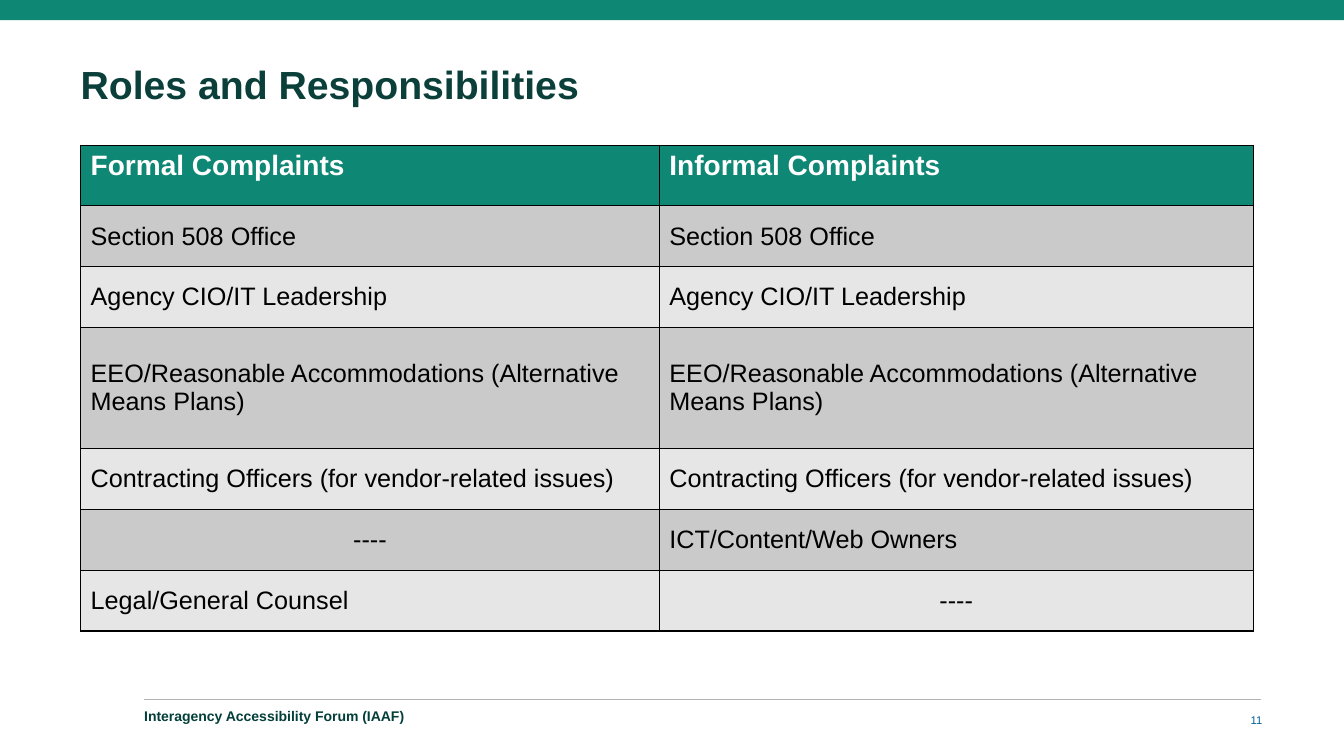
from dataclasses import dataclass

from lxml.etree import SubElement
from pptx import Presentation
from pptx.dml.color import RGBColor
from pptx.enum.shapes import MSO_CONNECTOR, MSO_SHAPE
from pptx.enum.text import MSO_ANCHOR, PP_ALIGN
from pptx.oxml.ns import qn
from pptx.util import Inches, Pt


@dataclass(frozen=True)
class Theme:
    font: str = "Arial"
    green: str = "0E8775"
    title: str = "0B3F3A"
    footer: str = "033F3A"
    number: str = "006197"
    rule: str = "B2B2B2"
    black: str = "000000"
    white: str = "FFFFFF"
    bands: tuple = ("CACACA", "E6E6E6")
    title_size: int = 28
    header_size: int = 20
    body_size: int = 18
    footer_size: int = 10
    number_size: int = 8


THEME = Theme()
WIDTH, HEIGHT = Inches(13.33), Inches(7.5)
LEFT = 6
ABSENT = "----"
COLUMN_SHARES = (43.06, 44.18)
ROW_UNITS = (1, 1, 1, 2, 1, 1, 1)
ROLES = (
    ("Formal Complaints", "Informal Complaints"),
    ("Section 508 Office",) * 2,
    ("Agency CIO/IT Leadership",) * 2,
    ("EEO/Reasonable Accommodations (Alternative Means Plans)",) * 2,
    ("Contracting Officers (for vendor-related issues)",) * 2,
    (ABSENT, "ICT/Content/Web Owners"),
    ("Legal/General Counsel", ABSENT),
)


def across(share):
    return round(WIDTH * share / 100)


def down(share):
    return round(HEIGHT * share / 100)


def area(left, top, width, height):
    return across(left), down(top), across(width), down(height)


def color(value):
    return RGBColor.from_string(value)


def write(frame, text, *, size, ink, bold=False, align=PP_ALIGN.LEFT, spacing=None):
    paragraph = frame.paragraphs[0]
    paragraph.alignment = align
    if spacing:
        paragraph.line_spacing = spacing
    run = paragraph.add_run()
    run.text = text
    run.font.name = THEME.font
    run.font.size = Pt(size)
    run.font.bold = bold
    run.font.color.rgb = color(ink)


def set_margins(frame, top=0):
    frame.word_wrap = True
    frame.margin_left = frame.margin_right = frame.margin_bottom = 0
    frame.margin_top = Inches(top)


def add_title(slide, text):
    title = slide.shapes.title
    title.left, title.top, title.width, title.height = area(LEFT, 8, 88, 6.27)
    set_margins(title.text_frame, top=0.05)
    title.text_frame.vertical_anchor = MSO_ANCHOR.TOP
    write(title.text_frame, text, size=THEME.title_size, ink=THEME.title,
          bold=True, spacing=0.9)


def add_label(slide, place, text, **style):
    frame = slide.shapes.add_textbox(*area(*place)).text_frame
    set_margins(frame)
    frame.vertical_anchor = MSO_ANCHOR.MIDDLE
    write(frame, text, **style)


def add_band(slide):
    band = slide.shapes.add_shape(MSO_SHAPE.RECTANGLE, *area(0, 0, 100, 2.67))
    band.shadow.inherit = False
    band.fill.solid()
    band.fill.fore_color.rgb = color(THEME.green)
    band.line.fill.background()


def add_rule(slide, start, end, level):
    rule = slide.shapes.add_connector(
        MSO_CONNECTOR.STRAIGHT, across(start), down(level), across(end), down(level))
    rule.line.color.rgb = color(THEME.rule)
    rule.line.width = Pt(0.75)
    SubElement(rule._element.spPr, qn("a:effectLst"))


def add_borders(cell):
    properties = cell._tc.get_or_add_tcPr()
    for position, side in enumerate(("a:lnL", "a:lnR", "a:lnT", "a:lnB")):
        border = properties.makeelement(qn(side), {"w": str(Pt(1))})
        properties.insert(position, border)
        fill = SubElement(border, qn("a:solidFill"))
        SubElement(fill, qn("a:srgbClr"), val=THEME.black)


def add_roles_table(slide):
    height = 64.27
    table = slide.shapes.add_table(
        len(ROLES), len(COLUMN_SHARES),
        *area(LEFT, 19.2, sum(COLUMN_SHARES), height)).table
    for column, share in zip(table.columns, COLUMN_SHARES):
        column.width = across(share)
    for row, units in zip(table.rows, ROW_UNITS):
        row.height = down(height * units / sum(ROW_UNITS))
    for row_index, roles in enumerate(ROLES):
        header = row_index == 0
        for column_index, role in enumerate(roles):
            cell = table.cell(row_index, column_index)
            cell.fill.solid()
            cell.fill.fore_color.rgb = color(
                THEME.green if header else THEME.bands[(row_index - 1) % 2])
            cell.vertical_anchor = MSO_ANCHOR.TOP if header else MSO_ANCHOR.MIDDLE
            write(cell.text_frame, role, bold=header,
                  size=THEME.header_size if header else THEME.body_size,
                  ink=THEME.white if header else THEME.black,
                  align=PP_ALIGN.CENTER if role == ABSENT else PP_ALIGN.LEFT)
            add_borders(cell)


def main():
    deck = Presentation()
    deck.slide_width, deck.slide_height = WIDTH, HEIGHT
    slide = deck.slides.add_slide(deck.slide_layouts[5])
    add_band(slide)
    add_rule(slide, 10.73, 93.85, 92.53)
    add_label(slide, (10.73, 93.87, 52.59, 2.53), "Interagency Accessibility Forum (IAAF)",
              size=THEME.footer_size, ink=THEME.footer, bold=True, spacing=0.5)
    add_title(slide, "Roles and Responsibilities")
    add_roles_table(slide)
    add_label(slide, (89.57, 93.87, 4.35, 2.67), "11",
              size=THEME.number_size, ink=THEME.number, align=PP_ALIGN.RIGHT)
    deck.save("out.pptx")


if __name__ == "__main__":
    main()
